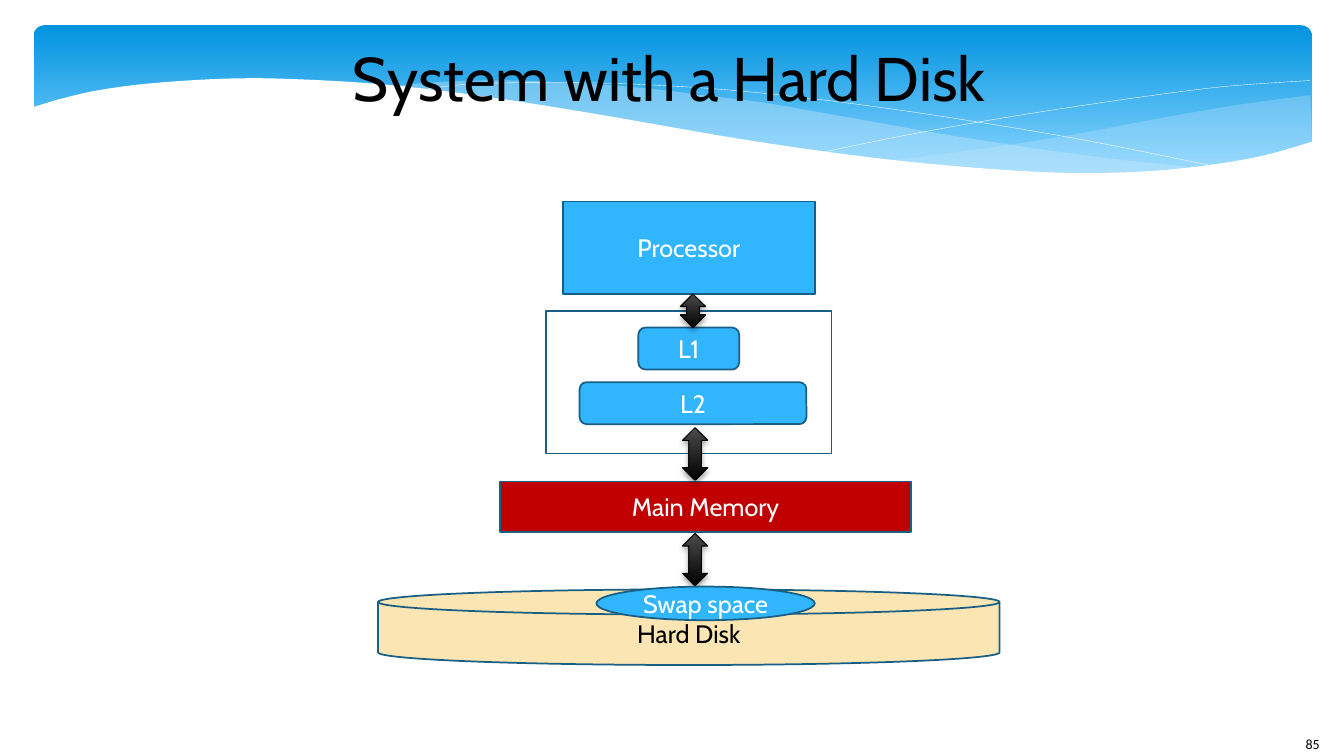
import dataclasses

import lxml.etree
import pptx
import pptx.dml.color
import pptx.enum.shapes
import pptx.enum.text
import pptx.oxml.ns
import pptx.util

Pt = pptx.util.Pt
MSO = pptx.enum.shapes.MSO_SHAPE
ALIGN = pptx.enum.text.PP_ALIGN
ANCHOR = pptx.enum.text.MSO_ANCHOR
qn = pptx.oxml.ns.qn


@dataclasses.dataclass(frozen=True)
class Theme:
    font: str = "Cabin"
    number_font: str = "Calibri"
    title_size: int = 44
    label_size: int = 18
    number_size: int = 10
    black: str = "000000"
    white: str = "FFFFFF"
    blue: str = "31B6FD"
    outline: str = "195F84"
    red: str = "C00000"
    sand: str = "FBE6B3"
    mist: str = "C6E7FC"
    band: tuple = ((0, "0293E0"), (0.9, "83D3FE"))
    arrow: tuple = ((0, "4B4B4B"), (1, "000000"))


THEME = Theme()


def rgb(value):
    return pptx.dml.color.RGBColor.from_string(value)


def write(sp, text, size=THEME.label_size, color=THEME.white, font=THEME.font,
          align=ALIGN.CENTER, anchor=ANCHOR.MIDDLE, inset=None):
    tf = sp.text_frame
    tf.word_wrap = True
    tf.auto_size = pptx.enum.text.MSO_AUTO_SIZE.NONE
    tf.vertical_anchor = anchor
    if inset is not None:
        tf.margin_left = tf.margin_right = tf.margin_top = tf.margin_bottom = Pt(inset)
    p = tf.paragraphs[0]
    p.alignment = align
    r = p.add_run()
    r.text = text
    r.font.name = font
    r.font.size = Pt(size)
    r.font.color.rgb = rgb(color)


def paint(sp, fill=None, line=None, width=1.25, alpha=None):
    sp.shadow.inherit = False
    if fill is None:
        sp.fill.background()
    elif isinstance(fill, tuple):
        sp.fill.gradient()
        sp.fill.gradient_angle = 270
        for stop, (position, color) in zip(sp.fill.gradient_stops, fill):
            stop.position = position
            stop.color.rgb = rgb(color)
    else:
        sp.fill.solid()
        sp.fill.fore_color.rgb = rgb(fill)
    if alpha is not None:
        clr = sp._element.spPr.find(qn("a:solidFill"))[0]
        lxml.etree.SubElement(clr, qn("a:alpha"), val=str(alpha * 1000))
    if line is None:
        sp.line.fill.background()
    else:
        sp.line.color.rgb = rgb(line)
        sp.line.width = Pt(width)


def add_block(s, kind, x, y, w, h, fill=None, line=THEME.outline, **style):
    sp = s.shapes.add_shape(kind, Pt(x), Pt(y), Pt(w), Pt(h))
    paint(sp, fill, line, **style)
    return sp


def add_arrow(s, x, y, w, h):
    sp = add_block(s, MSO.UP_DOWN_ARROW, x, y, w, h, THEME.arrow, THEME.black, width=0.75)
    effects = sp._element.spPr.find(qn("a:effectLst"))
    shadow = lxml.etree.SubElement(effects, qn("a:outerShdw"), blurRad=str(Pt(4)),
                                   dist=str(Pt(2)), dir="5400000", rotWithShape="0")
    clr = lxml.etree.SubElement(shadow, qn("a:srgbClr"), val=THEME.black)
    lxml.etree.SubElement(clr, qn("a:alpha"), val="38000")


def smooth(knots, steps=6):
    ends = [knots[0], *knots, knots[-1]]
    points = [knots[0]]
    for a, b, c, d in zip(ends, ends[1:], ends[2:], ends[3:]):
        for t in (i / steps for i in range(1, steps + 1)):
            points.append(tuple(
                (2 * q + (r - p) * t + (2 * p - 5 * q + 4 * r - e) * t ** 2
                 + (3 * q - p - 3 * r + e) * t ** 3) / 2
                for p, q, r, e in zip(a, b, c, d)))
    return points


def add_curve(s, left, top, points, closed=True, **style):
    points = [(Pt(left + x), Pt(top + y)) for x, y in points]
    builder = s.shapes.build_freeform(*points[0], scale=1.0)
    builder.add_line_segments(points[1:], close=closed)
    paint(builder.convert_to_shape(), **style)


def add_wave_band(s, x, y, w, h):
    band = add_block(s, MSO.ROUNDED_RECTANGLE, x, y, w, h, THEME.band, None)
    band.adjustments[0] = 0.07

    right_top = [(912, 50), (860, 57), (802, 67), (749, 77), (700, 85), (654, 91.5), (611, 97)]
    right_base = [(611, 97), (666, 102), (714, 105), (769, 106), (821, 102.5),
                  (874, 94.5), (913, 84)]
    middle_top = [(833, 102), (751, 93), (654, 78.5), (580, 65.5), (523, 55.5), (482, 50.5),
                  (446, 46), (400, 42), (340, 39.5), (291, 40.5), (251, 44)]
    middle_base = [(251, 44), (324, 52), (407, 65.5), (520, 85), (615, 98), (695, 104.5),
                   (771, 106.5), (833, 102)]
    add_curve(s, x, y, smooth(right_top) + smooth(right_base), fill=THEME.mist, alpha=29)
    add_curve(s, x, y, smooth(middle_top) + smooth(middle_base), fill=THEME.mist, alpha=40)

    falling = [(273, 47), (306, 42.5), (361, 41), (426, 42), (510, 47.5), (614, 60),
               (739, 80), (847, 101.5)]
    rising = [(565, 90.5), (621, 79), (694, 66), (779, 53), (849, 44), (912, 39.5)]
    for knots in (falling, rising):
        add_curve(s, x, y, smooth(knots), closed=False, line=THEME.white, width=0.25)

    edge = [(914, 83), (879, 93), (839, 100), (793, 104.5), (738, 105.5), (674, 102),
            (598, 94.5), (509, 82), (405, 64), (326, 51.5), (257, 43), (197, 39),
            (145, 38), (90, 41), (49, 46), (20, 52.5), (-1.5, 59)]
    add_curve(s, x, y, smooth(edge) + [(-1.5, 143), (914, 143)], fill=THEME.white)


def add_title(s, text, x, y, w, h):
    sp = s.shapes.title
    sp.left, sp.top, sp.width, sp.height = Pt(x), Pt(y), Pt(w), Pt(h)
    write(sp, text, size=THEME.title_size, color=THEME.black, inset=0)
    s.shapes._spTree.append(sp._element)


def add_slide_number(s, text, x, y, w, h):
    sp = s.shapes.add_textbox(Pt(x), Pt(y), Pt(w), Pt(h))
    write(sp, text, size=THEME.number_size, color=THEME.black, font=THEME.number_font,
          align=ALIGN.LEFT, anchor=ANCHOR.TOP, inset=0)


def add_memory_hierarchy(s, x, y, w):
    def block(kind, dx, dy, width, height, fill, label, color=THEME.white):
        sp = add_block(s, kind, x + dx, y + dy, width, height, fill)
        write(sp, label, color=color)

    block(MSO.RECTANGLE, 132, 0, 180, 66, THEME.blue, "Processor")
    block(MSO.ROUNDED_RECTANGLE, 186, 90, 72, 30, THEME.blue, "L1")
    block(MSO.ROUNDED_RECTANGLE, 144, 129, 162, 30, THEME.blue, "L2")
    add_block(s, MSO.RECTANGLE, x + 120, y + 78, 204, 102)
    block(MSO.RECTANGLE, 87, 200, 294, 36, THEME.red, "Main Memory")
    for dx, dy, height in ((216, 66, 24), (217.5, 161.5, 37.5), (217.5, 237, 37.5)):
        add_arrow(s, x + dx, y + dy, 18, height)
    block(MSO.FLOWCHART_MAGNETIC_DISK, 0, 277, w, 54, THEME.sand, "Hard Disk", THEME.black)
    block(MSO.OVAL, 156, 275, 156, 24, THEME.blue, "Swap space")


def main():
    prs = pptx.Presentation()
    prs.slide_width, prs.slide_height = Pt(960), Pt(540)
    s = prs.slides.add_slide(prs.slide_layouts[5])
    add_wave_band(s, 24, 18, 913, 112)
    add_slide_number(s, "85", 932.5, 525.5, 27, 14)
    add_title(s, "System with a Hard Disk", 186, 18, 584, 73.5)
    add_memory_hierarchy(s, 270, 144, 444)
    prs.save("out.pptx")


if __name__ == "__main__":
    main()
